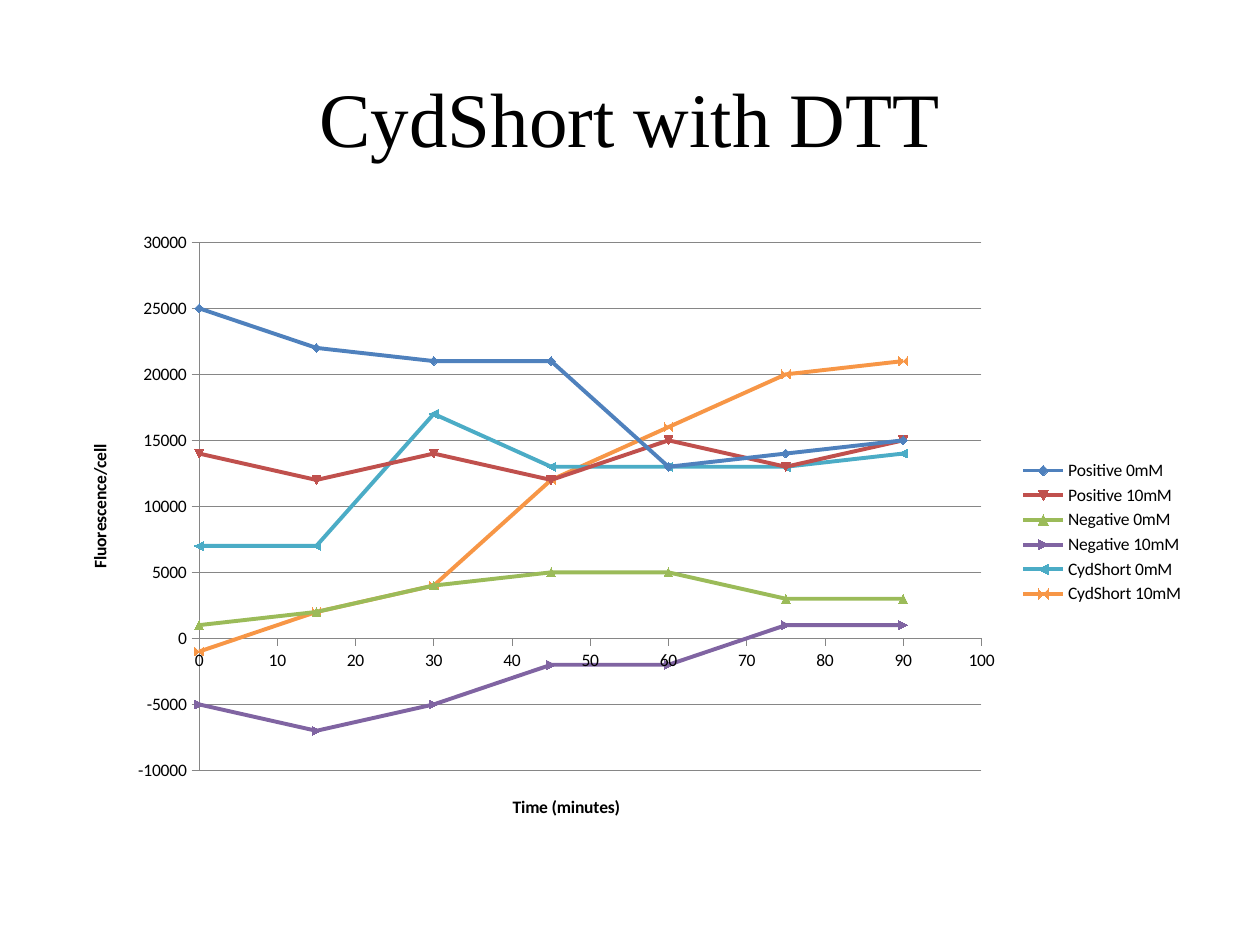
from dataclasses import dataclass

from lxml import etree
from pptx import Presentation
from pptx.chart.data import XyChartData
from pptx.dml.color import RGBColor
from pptx.enum.chart import XL_CHART_TYPE, XL_LEGEND_POSITION, XL_TICK_MARK
from pptx.enum.text import MSO_ANCHOR, PP_ALIGN
from pptx.oxml.ns import qn
from pptx.util import Inches, Pt

SCATTER = XL_CHART_TYPE.XY_SCATTER_LINES
RIGHT = XL_LEGEND_POSITION.RIGHT
OUTSIDE = XL_TICK_MARK.OUTSIDE
NO_TICK = XL_TICK_MARK.NONE


@dataclass(frozen=True)
class Theme:
    title_font: str = "Times New Roman"
    chart_font: str = "Calibri"
    title_size: int = 44
    chart_size: int = 10
    line_width: float = 2.25
    axis_width: float = 0.5
    text: str = "000000"
    axis: str = "868686"


THEME = Theme()
TITLE = "CydShort with DTT"
MINUTES = (0, 15, 30, 45, 60, 75, 90)
SERIES = [
    ("Positive 0mM", "4F81BD", (25000, 22000, 21000, 21000, 13000, 14000, 15000)),
    ("Positive 10mM", "C0504D", (14000, 12000, 14000, 12000, 15000, 13000, 15000)),
    ("Negative 0mM", "9BBB59", (1000, 2000, 4000, 5000, 5000, 3000, 3000)),
    ("Negative 10mM", "8064A2", (-5000, -7000, -5000, -2000, -2000, 1000, 1000)),
    ("CydShort 0mM", "4BACC6", (7000, 7000, 17000, 13000, 13000, 13000, 14000)),
    ("CydShort 10mM", "F79646", (-1000, 2000, 4000, 12000, 16000, 20000, 21000)),
]
AXES = {
    "category_axis": ("Time (minutes)", 0, 100, 10),
    "value_axis": ("Fluorescence/cell", -10000, 30000, 5000),
}
PAGE_WIDTH, PAGE_HEIGHT = 10, 7.5
MARGIN = 0.05 * PAGE_WIDTH
CONTENT_WIDTH = PAGE_WIDTH - 2 * MARGIN
TITLE_TOP, TITLE_HEIGHT = 0.04 * PAGE_HEIGHT, PAGE_HEIGHT / 6
CHART_TOP, CHART_HEIGHT = 1.75, 0.66 * PAGE_HEIGHT
PLOT_SHARES = {"x": 0.12, "y": 0.035, "w": 0.69, "h": 0.847}


def color(value):
    return RGBColor.from_string(value)


def style_font(font, name, size, bold=False):
    font.name, font.size, font.bold = name, Pt(size), bold
    font.color.rgb = color(THEME.text)


def style_line(line, value, width):
    line.color.rgb = color(value)
    line.width = Pt(width)


def add_title(page):
    box = page.shapes.title
    box.left, box.top = Inches(MARGIN), Inches(TITLE_TOP)
    box.width, box.height = Inches(CONTENT_WIDTH), Inches(TITLE_HEIGHT)
    box.text_frame.vertical_anchor = MSO_ANCHOR.MIDDLE
    para = box.text_frame.paragraphs[0]
    para.alignment = PP_ALIGN.CENTER
    span = para.add_run()
    span.text = TITLE
    style_font(span.font, THEME.title_font, THEME.title_size)


def style_axis(axis, title, low, high, step):
    axis.minimum_scale, axis.maximum_scale, axis.major_unit = low, high, step
    axis.major_tick_mark, axis.minor_tick_mark = OUTSIDE, NO_TICK
    axis.tick_labels.number_format = "General"
    axis.tick_labels.number_format_is_linked = False
    style_line(axis.format.line, THEME.axis, THEME.axis_width)
    span = axis.axis_title.text_frame.paragraphs[0].add_run()
    span.text = title
    style_font(span.font, THEME.chart_font, THEME.chart_size, bold=True)


def fix_plot_area(chart):
    """Place the inner plot area by its shares of the chart's size."""
    plot_area = chart.element.find(qn("c:chart")).find(qn("c:plotArea"))
    for old in plot_area.findall(qn("c:layout")):
        plot_area.remove(old)
    layout = etree.Element(qn("c:layout"))
    manual = etree.SubElement(layout, qn("c:manualLayout"))
    settings = {"layoutTarget": "inner", "xMode": "edge", "yMode": "edge"}
    for name, value in {**settings, **PLOT_SHARES}.items():
        etree.SubElement(manual, qn(f"c:{name}")).set("val", str(value))
    plot_area.insert(0, layout)


def add_fluorescence_chart(page):
    data = XyChartData()
    for name, _, values in SERIES:
        series = data.add_series(name)
        for minute, value in zip(MINUTES, values):
            series.add_data_point(minute, value)
    chart = page.shapes.add_chart(
        SCATTER, Inches(MARGIN), Inches(CHART_TOP),
        Inches(CONTENT_WIDTH), Inches(CHART_HEIGHT), data).chart
    style_font(chart.font, THEME.chart_font, THEME.chart_size)
    chart.has_title = False
    chart.has_legend = True
    chart.legend.position = RIGHT
    chart.legend.include_in_layout = False

    chart.plots[0].vary_by_categories = False
    for series, (_, line_color, _) in zip(chart.plots[0].series, SERIES):
        series.smooth = False
        style_line(series.format.line, line_color, THEME.line_width)
    for name, settings in AXES.items():
        style_axis(getattr(chart, name), *settings)
    chart.category_axis.has_major_gridlines = False
    chart.value_axis.has_major_gridlines = True
    style_line(chart.value_axis.major_gridlines.format.line,
               THEME.axis, THEME.axis_width)
    fix_plot_area(chart)


def main():
    deck = Presentation()
    deck.slide_width, deck.slide_height = Inches(PAGE_WIDTH), Inches(PAGE_HEIGHT)
    page = deck.slides.add_slide(deck.slide_layouts.get_by_name("Title Only"))
    add_title(page)
    add_fluorescence_chart(page)
    deck.save("out.pptx")


if __name__ == "__main__":
    main()
